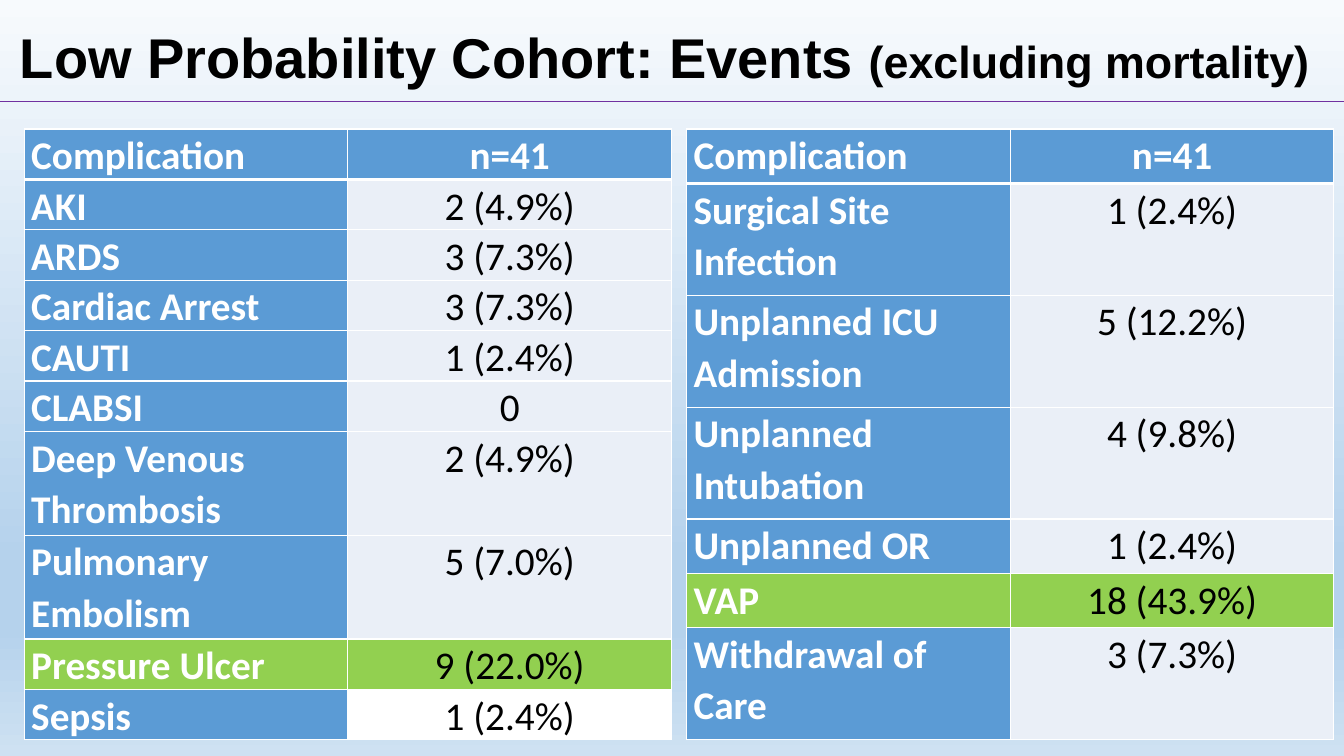
import copy

import pptx
import pptx.dml.color
import pptx.enum.shapes
import pptx.enum.text
import pptx.oxml
import pptx.oxml.ns
import pptx.util
from pptx.util import Inches

COLORS = {
    "black": "000000",
    "white": "FFFFFF",
    "blue": "5B9BD5",
    "pale": "EAEFF7",
    "green": "92D050",
    "rule": "7030A0",
}
BACKGROUND_STOPS = [(0, "F7FAFD"), (0.74, "B5D2EC"), (0.83, "B5D2EC"), (1, "CEE1F2")]

# Each row: complication, count, label fill, count fill
HEADER = ("Complication", "n=41", "blue", "blue")
LEFT_ROWS = [
    HEADER,
    ("AKI", "2 (4.9%)", "blue", "pale"),
    ("ARDS", "3 (7.3%)", "blue", "pale"),
    ("Cardiac Arrest", "3 (7.3%)", "blue", "pale"),
    ("CAUTI", "1 (2.4%)", "blue", "pale"),
    ("CLABSI", "0", "blue", "pale"),
    ("Deep Venous Thrombosis", "2 (4.9%)", "blue", "pale"),
    ("Pulmonary Embolism", "5 (7.0%)", "blue", "pale"),
    ("Pressure Ulcer", "9 (22.0%)", "green", "green"),
    ("Sepsis", "1 (2.4%)", "blue", "white"),
]
RIGHT_ROWS = [
    HEADER,
    ("Surgical Site Infection", "1 (2.4%)", "blue", "pale"),
    ("Unplanned ICU Admission", "5 (12.2%)", "blue", "pale"),
    ("Unplanned Intubation", "4 (9.8%)", "blue", "pale"),
    ("Unplanned OR", "1 (2.4%)", "blue", "pale"),
    ("VAP", "18 (43.9%)", "green", "green"),
    ("Withdrawal of Care", "3 (7.3%)", "blue", "pale"),
]


def rgb(value):
    return pptx.dml.color.RGBColor.from_string(value)


def style_span(span, font, size, color, bold):
    span.font.name = font
    span.font.size = pptx.util.Pt(size)
    span.font.bold = bold
    span.font.color.rgb = rgb(COLORS[color])


def paint_background(page):
    fill = page.background.fill
    fill.gradient()
    fill.gradient_angle = 270
    stop_list = page.element.find(".//" + pptx.oxml.ns.qn("a:gsLst"))
    while len(stop_list) < len(BACKGROUND_STOPS):
        stop_list.append(copy.deepcopy(stop_list[0]))
    for stop, (position, color) in zip(fill.gradient_stops, BACKGROUND_STOPS):
        stop.position = position
        stop.color.rgb = rgb(color)


def add_title(page):
    box = page.shapes.add_textbox(Inches(0.1), Inches(0.14), Inches(13.13), Inches(0.92))
    frame = box.text_frame
    frame.word_wrap = True
    frame.vertical_anchor = pptx.enum.text.MSO_ANCHOR.MIDDLE
    para = frame.paragraphs[0]
    para.line_spacing = 0.9
    for text, size in (("Low Probability Cohort: Events ", 40), ("(excluding mortality)", 32)):
        span = para.add_run()
        span.text = text
        style_span(span, "Arial", size, "black", True)


def add_rule(page):
    rule = page.shapes.add_connector(
        pptx.enum.shapes.MSO_CONNECTOR.STRAIGHT,
        Inches(0), Inches(1.01), Inches(13.33), Inches(1.01))
    rule.line.color.rgb = rgb(COLORS["rule"])
    rule.line.width = pptx.util.Pt(1)
    properties = rule.element.find(pptx.oxml.ns.qn("p:spPr"))
    properties.append(pptx.oxml.parse_xml(
        f"<a:effectLst {pptx.oxml.ns.nsdecls('a')}/>"))


def add_borders(cell, top, bottom):
    properties = cell._tc.get_or_add_tcPr()
    for side, points in (("L", 1), ("R", 1), ("T", top), ("B", bottom)):
        properties.append(pptx.oxml.parse_xml(
            f'<a:ln{side} {pptx.oxml.ns.nsdecls("a")} w="{pptx.util.Pt(points)}">'
            f'<a:solidFill><a:srgbClr val="{COLORS["white"]}"/></a:solidFill>'
            f"</a:ln{side}>"))


def fill_cell(cell, text, fill, color, bold, centered):
    cell.margin_left = cell.margin_right = Inches(0.07)
    cell.margin_top = cell.margin_bottom = 0
    cell.fill.solid()
    cell.fill.fore_color.rgb = rgb(COLORS[fill])
    cell.text_frame.text = text
    para = cell.text_frame.paragraphs[0]
    para.line_spacing = 1.07
    if centered:
        para.alignment = pptx.enum.text.PP_ALIGN.CENTER
    style_span(para.runs[0], "Calibri", 28, color, bold)


def add_events_table(page, left, rows, single, double, wrapped):
    """Rows whose label is in wrapped take the double height."""
    heights = [double if row[0] in wrapped else single for row in rows]
    table = page.shapes.add_table(
        len(rows), 2, Inches(left), Inches(1.28), Inches(6.42), Inches(sum(heights))).table
    for column in table.columns:
        column.width = Inches(3.21)
    for index, (label, count, label_fill, count_fill) in enumerate(rows):
        table.rows[index].height = Inches(heights[index])
        is_header = index == 0
        label_cell, count_cell = table.cell(index, 0), table.cell(index, 1)
        for cell in (label_cell, count_cell):
            add_borders(cell, 3 if index == 1 else 1, 3 if is_header else 1)
        fill_cell(label_cell, label, label_fill, "white", True, False)
        fill_cell(count_cell, count, count_fill,
                  "white" if is_header else "black", is_header, True)


def main():
    deck = pptx.Presentation()
    deck.slide_width = Inches(13.33)
    deck.slide_height = Inches(7.5)
    page = deck.slides.add_slide(deck.slide_layouts[6])

    # Background and heading
    paint_background(page)
    add_title(page)
    add_rule(page)

    # Complication tables
    add_events_table(page, 0.24, LEFT_ROWS, 0.5, 1.03,
                     {"Deep Venous Thrombosis", "Pulmonary Embolism"})
    add_events_table(page, 6.81, RIGHT_ROWS, 0.54, 1.11,
                     {"Surgical Site Infection", "Unplanned ICU Admission",
                      "Unplanned Intubation", "Withdrawal of Care"})

    deck.save("out.pptx")


if __name__ == "__main__":
    main()
